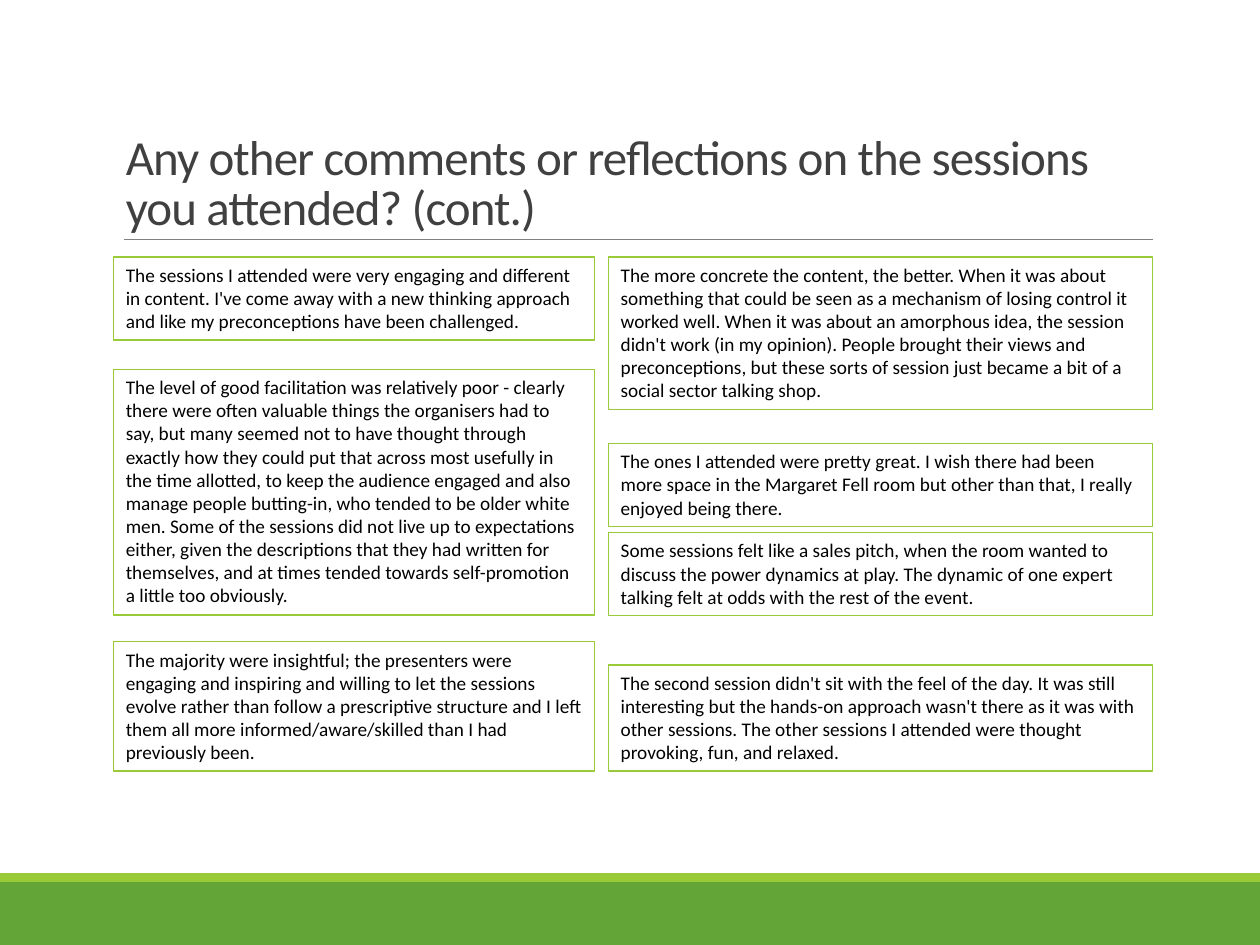
import pptx
import pptx.util
import pptx.dml.color
import pptx.enum.shapes
import pptx.enum.text
import pptx.oxml.ns
from lxml import etree

Pt = pptx.util.Pt
RECT = pptx.enum.shapes.MSO_SHAPE.RECTANGLE
ANCHOR = pptx.enum.text.MSO_ANCHOR
ALIGN = pptx.enum.text.PP_ALIGN

TITLE = "Any other comments or reflections on the sessions you attended? (cont.)"
LEFT_COMMENTS = [
    (0, 47.5, "The sessions I attended were very engaging and different in content. I've come away with a new thinking approach and like my preconceptions have been challenged."),
    (64.2, 140.5, "The level of good facilitation was relatively poor - clearly there were often valuable things the organisers had to say, but many seemed not to have thought through exactly how they could put that across most usefully in the time allotted, to keep the audience engaged and also manage people butting-in, who tended to be older white men. Some of the sessions did not live up to expectations either, given the descriptions that they had written for themselves, and at times tended towards self-promotion a little too obviously."),
    (219.8, 74, "The majority were insightful; the presenters were engaging and inspiring and willing to let the sessions evolve rather than follow a prescriptive structure and I left them all more informed/aware/skilled than I had previously been."),
]
RIGHT_COMMENTS = [
    (0, 87.3, "The more concrete the content, the better. When it was about something that could be seen as a mechanism of losing control it worked well. When it was about an amorphous idea, the session didn't work (in my opinion). People brought their views and preconceptions, but these sorts of session just became a bit of a social sector talking shop."),
    (106.6, 47.5, "The ones I attended were pretty great. I wish there had been more space in the Margaret Fell room but other than that, I really enjoyed being there."),
    (157.5, 47.5, "Some sessions felt like a sales pitch, when the room wanted to discuss the power dynamics at play. The dynamic of one expert talking felt at odds with the rest of the event."),
    (233.3, 60.5, "The second session didn't sit with the feel of the day. It was still interesting but the hands-on approach wasn't there as it was with other sessions. The other sessions I attended were thought provoking, fun, and relaxed."),
]


def rgb(value):
    """Turn a hex string into a colour."""
    return pptx.dml.color.RGBColor.from_string(value)


def write(s, text, size, color, frame, para):
    """Put one formatted paragraph into a shape."""
    tf = s.text_frame
    for name, value in dict(frame, word_wrap=True).items():
        setattr(tf, name, value)
    p = tf.paragraphs[0]
    for name, value in dict(para, alignment=ALIGN.LEFT).items():
        setattr(p, name, value)
    r = p.add_run()
    r.text = text
    for name, value in {"name": "Calibri", "size": Pt(size)}.items():
        setattr(r.font, name, value)
    r.font.color.rgb = rgb(color)
    return r


def add_rect(slide, left, top, width, height, fill=None, line=None):
    """Add a flat rectangle with an optional fill and outline."""
    s = slide.shapes.add_shape(RECT, Pt(left), Pt(top), Pt(width), Pt(height))
    s.shadow.inherit = False
    for part, color in ((s.fill, fill), (s.line.fill, line)):
        if color:
            part.solid()
            part.fore_color.rgb = rgb(color)
        else:
            part.background()
    if line:
        s.line.width = Pt(0.75)
    return s


def add_footer(slide, left, top, width, height):
    """Draw the two-tone green band."""
    strip = 5
    add_rect(slide, left, top + strip, width, height - strip, fill="63A537")
    add_rect(slide, left, top, width, strip, fill="99CB38")


def add_title(slide, left, top, width, height):
    """Write the title above its thin rule."""
    y = Pt(top + height - 1.3)
    rule = slide.shapes.add_connector(
        pptx.enum.shapes.MSO_CONNECTOR.STRAIGHT, Pt(left + 5.8), y, Pt(left + width), y)
    rule.line.color.rgb = rgb("808080")
    rule.line.width = Pt(0.5)
    etree.SubElement(rule._element.spPr, pptx.oxml.ns.qn("a:effectLst"))
    s = slide.shapes.add_textbox(Pt(left), Pt(top), Pt(width), Pt(height))
    r = write(s, TITLE, 28, "404040",
              {"vertical_anchor": ANCHOR.BOTTOM}, {"line_spacing": 0.85})
    r._r.get_or_add_rPr().set("spc", "-50")


def add_comments(slide, left, top, width, comments):
    """Place a column of outlined comments at their offsets."""
    for offset, height, text in comments:
        s = add_rect(slide, left, top + offset, width, height, line="99CB38")
        write(s, text, 11, "000000", {"vertical_anchor": ANCHOR.TOP}, {})


def main():
    """Build and save the slide."""
    prs = pptx.Presentation()
    prs.slide_width, prs.slide_height = Pt(720), Pt(540)
    slide = prs.slides.add_slide(prs.slide_layouts[6])
    add_footer(slide, 0, 499, 720, 41)
    add_title(slide, 64.8, 23.8, 594, 114.4)
    add_comments(slide, 64.8, 146.8, 275, LEFT_COMMENTS)
    add_comments(slide, 347.6, 146.8, 311.2, RIGHT_COMMENTS)
    prs.save("out.pptx")


if __name__ == "__main__":
    main()
